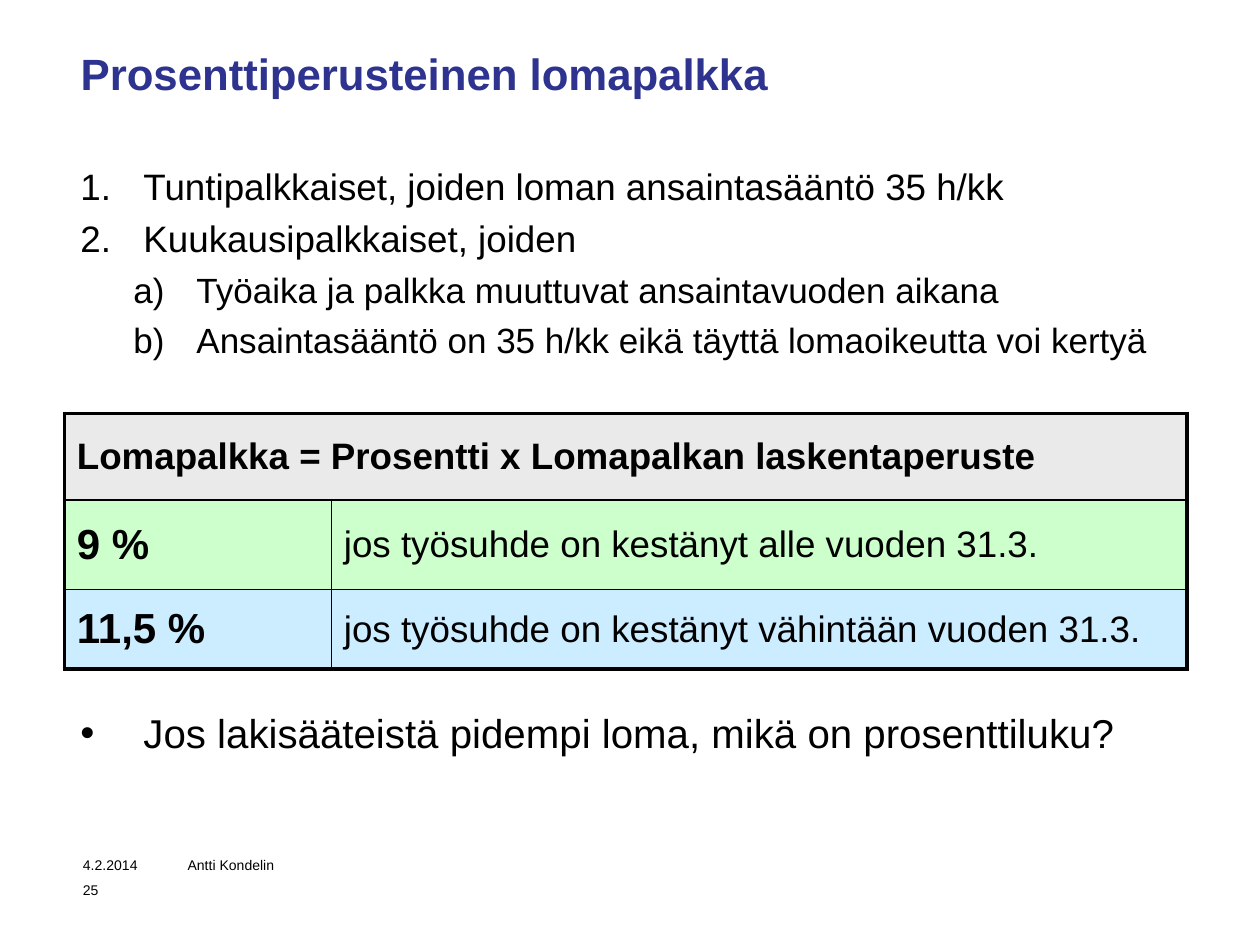
from dataclasses import dataclass

import pptx
import pptx.dml.color
import pptx.enum.text
import pptx.oxml.ns
import pptx.util
from lxml import etree

Inches, Pt = pptx.util.Inches, pptx.util.Pt
ANCHOR = pptx.enum.text.MSO_ANCHOR
FONT, BLACK, NAVY = "Arial", "000000", "2D338E"
THIN, THICK = 1, 2.25


@dataclass
class Item:
    text: str
    size: float
    bullet: tuple[str, str, str]  # element, attribute, value
    level: int = 0


@dataclass
class Row:
    height: float
    fill: str
    cells: tuple[str, ...]
    sizes: tuple[int, ...]


NUMBER = ("buAutoNum", "type", "arabicPeriod")
LETTER = ("buAutoNum", "type", "alphaLcParenR")
DOT = ("buChar", "char", "•")

GROUPS = [
    Item("Tuntipalkkaiset, joiden loman ansaintasääntö 35 h/kk", 21, NUMBER),
    Item("Kuukausipalkkaiset, joiden", 21, NUMBER),
    Item("Työaika ja palkka muuttuvat ansaintavuoden aikana", 20, LETTER, 1),
    Item("Ansaintasääntö on 35 h/kk eikä täyttä lomaoikeutta voi kertyä", 20, LETTER, 1),
]
QUESTION = [Item("Jos lakisääteistä pidempi loma, mikä on prosenttiluku?", 23, DOT)]

COLUMNS = (2.12, 6.79)
ROWS = [
    Row(0.69, "EAEAEA", ("Lomapalkka = Prosentti x Lomapalkan laskentaperuste",), (21,)),
    Row(0.71, "CCFFCC", ("9 %", "jos työsuhde on kestänyt alle vuoden 31.3."), (24, 21)),
    Row(0.63, "CCECFF", ("11,5 %", "jos työsuhde on kestänyt vähintään vuoden 31.3."), (24, 21)),
]


def rgb(color: str):
    return pptx.dml.color.RGBColor.from_string(color)


def sub(parent, tag: str, **attrs: str):
    return etree.SubElement(parent, pptx.oxml.ns.qn(f"a:{tag}"), attrs)


def write(p, text: str, size: float, color: str = BLACK, bold: bool = False) -> None:
    p.alignment = pptx.enum.text.PP_ALIGN.LEFT
    r = p.add_run()
    r.text = text
    r.font.name, r.font.size, r.font.bold = FONT, Pt(size), bold
    r.font.color.rgb = rgb(color)


def add_box(s, left: float, top: float, width: float, height: float):
    tf = s.shapes.add_textbox(Inches(left), Inches(top), Inches(width), Inches(height)).text_frame
    tf.word_wrap = True
    return tf


def add_list(s, items: list[Item], top: float, height: float) -> None:
    tf = add_box(s, 0.54, top, 8.95, height)
    for i, item in enumerate(items):
        p = tf.add_paragraph() if i else tf.paragraphs[0]
        p.level = item.level
        pPr = p._p.get_or_add_pPr()
        pPr.set("marL", str(Inches(0.5 + 0.42 * item.level)))
        pPr.set("indent", str(Inches(-0.5)))
        tag, attr, value = item.bullet
        sub(pPr, "buFont", typeface=FONT)
        sub(pPr, tag, **{attr: value})
        if i:
            p.space_before = Pt(round(item.size * 0.23, 1))
        write(p, item.text, item.size)


def set_borders(cell, **widths: float) -> None:
    """Draw black borders; call before filling, as lines precede the fill."""
    tcPr = cell._tc.get_or_add_tcPr()
    for side, width in widths.items():
        ln = sub(tcPr, f"ln{side}", w=str(Pt(width)))
        sub(sub(ln, "solidFill"), "srgbClr", val=BLACK)


def add_pay_table(s) -> None:
    last_row, last_col = len(ROWS) - 1, len(COLUMNS) - 1
    table = s.shapes.add_table(
        len(ROWS), len(COLUMNS), Inches(0.51), Inches(3.28),
        Inches(sum(COLUMNS)), Inches(sum(row.height for row in ROWS))).table
    table.first_row = table.horz_banding = False
    for column, width in zip(table.columns, COLUMNS):
        column.width = Inches(width)
    table.cell(0, 0).merge(table.cell(0, last_col))
    for i, row in enumerate(ROWS):
        table.rows[i].height = Inches(row.height)
        for j in range(len(COLUMNS)):
            cell = table.cell(i, j)
            outer_right = j == last_col or cell.is_merge_origin
            set_borders(cell, L=THIN if j else THICK, R=THICK if outer_right else THIN,
                        T=THIN if i else THICK, B=THICK if i == last_row else THIN)
            cell.fill.solid()
            cell.fill.fore_color.rgb = rgb(row.fill)
            cell.vertical_anchor = ANCHOR.MIDDLE
            if j < len(row.cells):
                write(cell.text_frame.paragraphs[0], row.cells[j], row.sizes[j], bold=j == 0)


def add_title(s, text: str) -> None:
    sp = s.shapes.title
    sp.left, sp.top, sp.width, sp.height = map(Inches, (0.54, 0.32, 8.96, 0.85))
    tf = sp.text_frame
    tf.vertical_anchor = ANCHOR.TOP
    tf.auto_size = pptx.enum.text.MSO_AUTO_SIZE.NONE
    write(tf.paragraphs[0], text, 25, color=NAVY, bold=True)


def main() -> None:
    prs = pptx.Presentation()
    prs.slide_width, prs.slide_height = Inches(10), Inches(7.5)
    s = prs.slides.add_slide(prs.slide_layouts[5])
    add_title(s, "Prosenttiperusteinen lomapalkka")
    add_list(s, GROUPS, top=1.25, height=1.8)
    add_pay_table(s)
    add_list(s, QUESTION, top=5.57, height=0.5)
    for text, left, top, width in (("4.2.2014", 0.56, 6.75, 1.02),
                                   ("Antti Kondelin", 1.39, 6.75, 1.78),
                                   ("25", 0.56, 6.95, 0.8)):
        write(add_box(s, left, top, width, 0.24).paragraphs[0], text, 8)
    prs.save("out.pptx")


if __name__ == "__main__":
    main()
